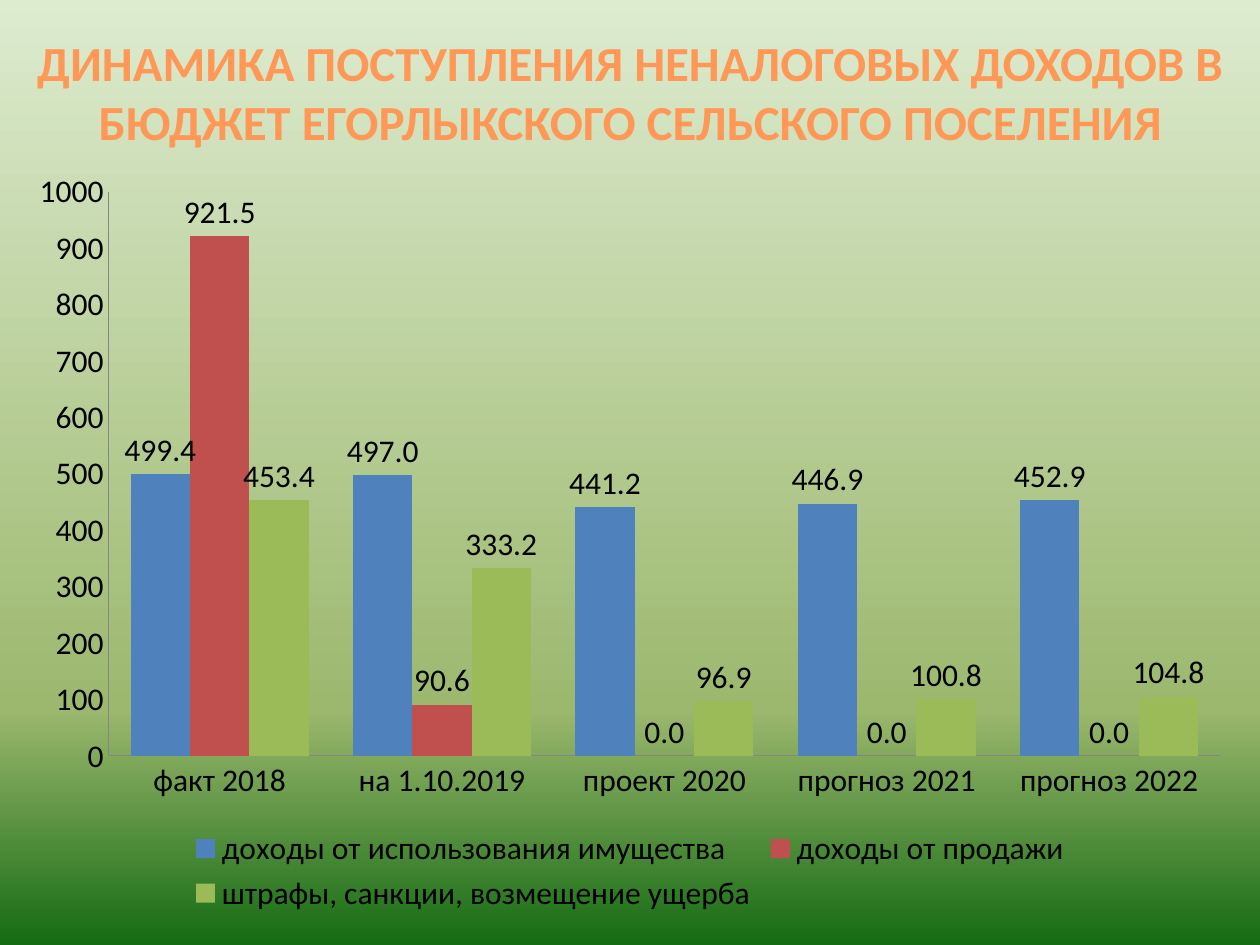
"""Build a slide charting non-tax budget income by year."""
from copy import deepcopy

from pptx import Presentation
from pptx import util as u
from pptx.chart.data import CategoryChartData
from pptx.dml.color import RGBColor
from pptx.enum import chart as charts, text
from pptx.oxml.ns import qn

THEME = {
    "font": "Calibri",
    "title_size": u.Pt(28),
    "chart_size": u.Pt(18),
    "title": RGBColor.from_string("FF9856"),
    "text": RGBColor.from_string("000000"),
    "axis": RGBColor.from_string("868686"),
    "background": [(0, "DDEBCF"), (0.75, "9CB86E"), (1, "156B13")],
}
YEARS = ["факт 2018", "на 1.10.2019", "проект 2020", "прогноз 2021", "прогноз 2022"]
INCOME = [
    ("доходы от использования имущества", "4F81BD", [499.4, 497, 441.2, 446.9, 452.9]),
    ("доходы от продажи", "C0504D", [921.5, 90.6, 0, 0, 0]),
    ("штрафы, санкции, возмещение ущерба", "9BBB59", [453.4, 333.2, 96.9, 100.8, 104.8]),
]

deck = Presentation()
deck.slide_width, deck.slide_height = u.Inches(10), u.Inches(7.5)
page = deck.slides.add_slide(deck.slide_layouts[5])

backdrop = page.background.fill
backdrop.gradient()
backdrop.gradient_angle = 270
stop_list = next(page.element.iter(qn("a:gsLst")))
stop_list.append(deepcopy(stop_list[0]))
for stop, (position, color) in zip(backdrop.gradient_stops, THEME["background"]):
    stop.position = position
    stop.color.rgb = RGBColor.from_string(color)

title = page.shapes.title
title.left, title.top = u.Inches(0.12), u.Inches(0.21)
title.width, title.height = u.Inches(9.76), u.Inches(1.04)
title.text_frame.word_wrap = True
title.text_frame.auto_size = text.MSO_AUTO_SIZE.NONE
title.text_frame.vertical_anchor = text.MSO_ANCHOR.TOP
para = title.text_frame.paragraphs[0]
para.alignment = text.PP_ALIGN.CENTER
span = para.add_run()
span.text = "ДИНАМИКА ПОСТУПЛЕНИЯ НЕНАЛОГОВЫХ ДОХОДОВ В БЮДЖЕТ ЕГОРЛЫКСКОГО СЕЛЬСКОГО ПОСЕЛЕНИЯ"
span.font.name = THEME["font"]
span.font.size = THEME["title_size"]
span.font.bold = True
span.font.color.rgb = THEME["title"]

data = CategoryChartData(number_format="0.0")
data.categories = YEARS
for name, color, values in INCOME:
    data.add_series(name, values)
chart = page.shapes.add_chart(
    charts.XL_CHART_TYPE.COLUMN_CLUSTERED,
    u.Inches(0.12), u.Inches(1.25), u.Inches(9.76), u.Inches(6.04), data,
).chart
chart.has_title = False
chart.font.name = THEME["font"]
chart.font.size = THEME["chart_size"]
chart.font.color.rgb = THEME["text"]
chart.has_legend = True
chart.legend.position = charts.XL_LEGEND_POSITION.BOTTOM
chart.legend.include_in_layout = False

for axis in (chart.category_axis, chart.value_axis):
    axis.has_major_gridlines = False
    axis.major_tick_mark = charts.XL_TICK_MARK.NONE
    axis.minor_tick_mark = charts.XL_TICK_MARK.NONE
    axis.format.line.color.rgb = THEME["axis"]
    axis.format.line.width = u.Pt(0.75)
chart.value_axis.minimum_scale = 0
chart.value_axis.maximum_scale = 1000
chart.value_axis.major_unit = 100
chart.value_axis.tick_labels.number_format = "0"
chart.value_axis.tick_labels.number_format_is_linked = False

plot = chart.plots[0]
plot.gap_width = 75
plot.overlap = 0
plot.vary_by_categories = False
for series, (name, color, values) in zip(plot.series, INCOME):
    series.invert_if_negative = False
    series.format.fill.solid()
    series.format.fill.fore_color.rgb = RGBColor.from_string(color)
    labels = series.data_labels
    labels.show_value = True
    labels.number_format = "0.0"
    labels.number_format_is_linked = False
    labels.position = charts.XL_LABEL_POSITION.OUTSIDE_END

deck.save("out.pptx")
